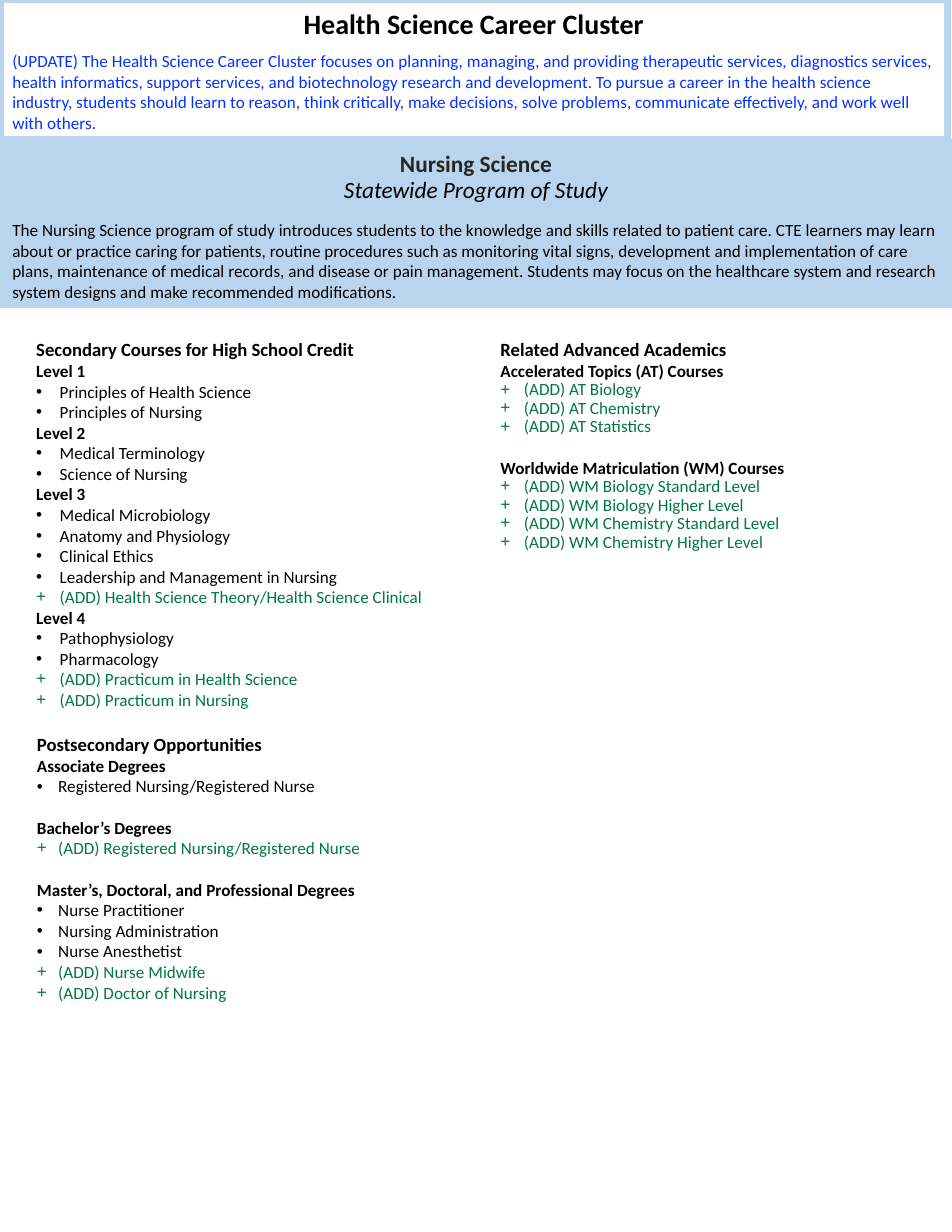
from dataclasses import dataclass
from typing import NamedTuple

from lxml.etree import SubElement
from pptx import Presentation
from pptx.dml.color import RGBColor
from pptx.enum.shapes import MSO_SHAPE
from pptx.enum.text import MSO_ANCHOR, MSO_AUTO_SIZE, PP_ALIGN
from pptx.oxml.ns import qn
from pptx.util import Inches, Pt

WIDE, HIGH = Inches(8.5), Inches(11)


@dataclass(frozen=True)
class Theme:
    font: str = "Calibri"
    ink: str = "000000"
    dark: str = "262626"
    blue: str = "0432FF"
    green: str = "007742"
    band: str = "B9D4ED"
    edge: str = "BAD4ED"
    top: float = 18
    title: float = 15
    head: float = 12
    body: float = 11
    gap: float = 13.4  # one empty body line


THEME = Theme()


class Area(NamedTuple):
    """Left, top, width and height in percent of the slide."""
    x: float
    y: float
    w: float
    h: float

    def box(self) -> tuple[int, int, int, int]:
        return (round(WIDE * self.x / 100), round(HIGH * self.y / 100),
                round(WIDE * self.w / 100), round(HIGH * self.h / 100))


@dataclass(frozen=True)
class Group:
    head: str
    items: tuple[str, ...]
    gap: bool = False


@dataclass(frozen=True)
class Column:
    """A titled list; items that start with (ADD) are green with a plus."""
    area: Area
    title: str
    groups: tuple[Group, ...]
    inset: tuple[float, float] = (0.1, 0.05)
    indent: float = 0.21
    pitch: float = 1.0


HEADER = Area(0, 0, 99.53, 11.36)
TITLE = Area(0, 11.27, 100, 6.36)
INTRO = Area(0, 17.27, 100, 7.73)
PAD = (0.11, 0.06)

CLUSTER = (
    "(UPDATE) The Health Science Career Cluster focuses on planning, managing, "
    "and providing therapeutic services, diagnostics services, health "
    "informatics, support services, and biotechnology research and development. "
    "To pursue a career in the health science industry, students should learn "
    "to reason, think critically, make decisions, solve problems, communicate "
    "effectively, and work well with others.")
PROGRAM = (
    "The Nursing Science program of study introduces students to the knowledge "
    "and skills related to patient care. CTE learners may learn about or "
    "practice caring for patients, routine procedures such as monitoring vital "
    "signs, development and implementation of care plans, maintenance of "
    "medical records, and disease or pain management. Students may focus on the "
    "healthcare system and research system designs and make recommended "
    "modifications.")

COLUMNS = (
    Column(Area(2.65, 27, 46.47, 31.18), "Secondary Courses for High School Credit", (
        Group("Level 1", ("Principles of Health Science", "Principles of Nursing")),
        Group("Level 2", ("Medical Terminology", "Science of Nursing")),
        Group("Level 3", (
            "Medical Microbiology", "Anatomy and Physiology", "Clinical Ethics",
            "Leadership and Management in Nursing",
            "(ADD) Health Science Theory/Health Science Clinical")),
        Group("Level 4", (
            "Pathophysiology", "Pharmacology",
            "(ADD) Practicum in Health Science", "(ADD) Practicum in Nursing")),
    )),
    Column(Area(51.41, 27, 46.47, 18.82), "Related Advanced Academics", (
        Group("Accelerated Topics (AT) Courses", (
            "(ADD) AT Biology", "(ADD) AT Chemistry", "(ADD) AT Statistics")),
        Group("Worldwide Matriculation (WM) Courses", (
            "(ADD) WM Biology Standard Level", "(ADD) WM Biology Higher Level",
            "(ADD) WM Chemistry Standard Level", "(ADD) WM Chemistry Higher Level"),
            gap=True),
    ), pitch=0.9),
    Column(Area(2.59, 58.95, 45.88, 23), "Postsecondary Opportunities", (
        Group("Associate Degrees", ("Registered Nursing/Registered Nurse",)),
        Group("Bachelor’s Degrees", ("(ADD) Registered Nursing/Registered Nurse",),
              gap=True),
        Group("Master’s, Doctoral, and Professional Degrees", (
            "Nurse Practitioner", "Nursing Administration", "Nurse Anesthetist",
            "(ADD) Nurse Midwife", "(ADD) Doctor of Nursing"), gap=True),
    ), inset=PAD, indent=0.19),
)


def write(frame, text: str, size: float, color: str = THEME.ink,
          bold: bool = False, italic: bool = False, align=PP_ALIGN.LEFT):
    """Fill the empty first paragraph, or add one after the others."""
    para = frame.paragraphs[0] if not frame.text else frame.add_paragraph()
    para.text, para.alignment = text, align
    font = para.font
    font.name, font.size = THEME.font, Pt(size)
    font.bold, font.italic = bold, italic
    font.color.rgb = RGBColor.from_string(color)
    return para


def setup(frame, inset: tuple[float, float], anchor=MSO_ANCHOR.TOP) -> None:
    frame.word_wrap, frame.auto_size = True, MSO_AUTO_SIZE.NONE
    frame.vertical_anchor = anchor
    frame.margin_left = frame.margin_right = Inches(inset[0])
    frame.margin_top = frame.margin_bottom = Inches(inset[1])


def mark(para, sign: str, indent: float) -> None:
    """Give a paragraph a bullet and a hanging indent."""
    props = para._p.get_or_add_pPr()
    props.set("marL", str(Inches(indent)))
    props.set("indent", str(-Inches(indent)))
    SubElement(props, qn("a:buFont"), typeface="Arial")
    SubElement(props, qn("a:buChar"), char=sign)


def panel(slide, area: Area):
    shape = slide.shapes.add_shape(MSO_SHAPE.RECTANGLE, *area.box())
    shape.shadow.inherit = False
    setup(shape.text_frame, PAD)
    return shape


def paint(shape, color: str) -> None:
    shape.fill.solid()
    shape.fill.fore_color.rgb = RGBColor.from_string(color)


def draw_title(slide) -> None:
    title = slide.shapes.title
    title.left, title.top, title.width, title.height = TITLE.box()
    paint(title, THEME.band)
    frame = title.text_frame
    setup(frame, (0.1, 0.05), MSO_ANCHOR.MIDDLE)
    center = PP_ALIGN.CENTER
    write(frame, "Nursing Science", THEME.title, THEME.dark, bold=True, align=center)
    write(frame, "Statewide Program of Study", THEME.title, italic=True, align=center)
    for para in frame.paragraphs:
        para.line_spacing, para.space_before = 0.9, Pt(0)


def draw_header(slide) -> None:
    shape = panel(slide, HEADER)
    shape.fill.background()
    shape.line.color.rgb = RGBColor.from_string(THEME.edge)
    shape.line.width = Pt(4.5)
    head = write(shape.text_frame, "Health Science Career Cluster", THEME.top,
                 bold=True, align=PP_ALIGN.CENTER)
    head.space_after = Pt(6.6)
    write(shape.text_frame, CLUSTER, THEME.body, THEME.blue)


def draw_intro(slide) -> None:
    shape = panel(slide, INTRO)
    paint(shape, THEME.edge)
    shape.line.fill.background()
    write(shape.text_frame, PROGRAM, THEME.body)


def draw_column(slide, col: Column) -> None:
    frame = slide.shapes.add_textbox(*col.area.box()).text_frame
    setup(frame, col.inset)
    write(frame, col.title, THEME.head, bold=True)
    for group in col.groups:
        head = write(frame, group.head, THEME.body, bold=True)
        head.space_before = Pt(THEME.gap if group.gap else 0)
        for item in group.items:
            new = item.startswith("(ADD)")
            para = write(frame, item, THEME.body, THEME.green if new else THEME.ink)
            para.line_spacing = col.pitch
            mark(para, "+" if new else "•", col.indent)


def main() -> None:
    deck = Presentation()
    deck.slide_width, deck.slide_height = WIDE, HIGH
    slide = deck.slides.add_slide(deck.slide_layouts[5])
    draw_title(slide)
    draw_header(slide)
    draw_intro(slide)
    for col in COLUMNS:
        draw_column(slide, col)
    deck.save("out.pptx")


if __name__ == "__main__":
    main()
